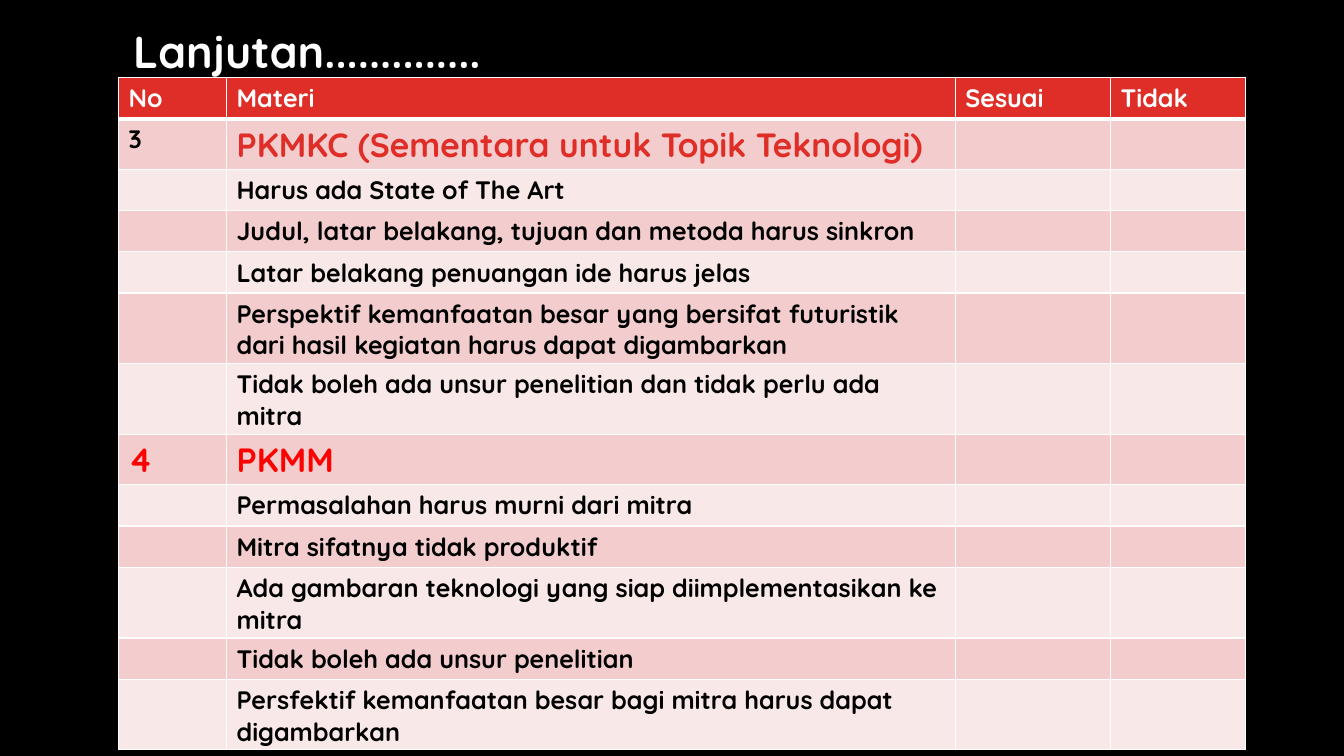
from collections import namedtuple
from dataclasses import dataclass

from lxml import etree
from pptx import Presentation
from pptx.dml.color import RGBColor
from pptx.enum.text import MSO_ANCHOR, MSO_AUTO_SIZE, PP_ALIGN
from pptx.oxml.ns import qn
from pptx.util import Cm, Pt

TOP = MSO_ANCHOR.TOP
LEFT = PP_ALIGN.LEFT
GROW = MSO_AUTO_SIZE.SHAPE_TO_FIT_TEXT
TITLE_ONLY = 5

Box = namedtuple("Box", "left top width height")


@dataclass(frozen=True)
class Theme:
    font: str = "Quicksand"
    background: str = "000000"
    white: str = "FFFFFF"
    ink: str = "000000"
    header: str = "DF2E28"
    alert: str = "FF0000"
    bands: tuple = ("F3CDCD", "F9E8E8")
    title_size: int = 32
    section_size: int = 24
    body_size: int = 18
    rule: int = 1
    header_rule: int = 3


THEME = Theme()

HEADINGS = ("No", "Materi", "Sesuai", "Tidak")
COLUMN_SHARES = (1.07, 7.23, 1.54, 1.34)

Section = namedtuple("Section", "number number_style name name_style criteria")
BODY = {"size": THEME.body_size, "color": THEME.ink}
SECTIONS = (
    Section(
        "3", BODY,
        "PKMKC (Sementara untuk Topik Teknologi)",
        {"size": THEME.section_size, "color": THEME.header},
        (
            "Harus ada State of The Art",
            "Judul, latar belakang, tujuan dan metoda harus sinkron",
            "Latar belakang penuangan ide harus jelas",
            "Perspektif kemanfaatan besar yang bersifat futuristik dari hasil "
            "kegiatan harus dapat digambarkan",
            "Tidak boleh ada unsur penelitian dan tidak perlu ada mitra",
        ),
    ),
    Section(
        "4", {"size": THEME.section_size, "color": THEME.alert},
        "PKMM",
        {"size": THEME.section_size, "color": THEME.alert},
        (
            "Permasalahan harus murni dari mitra",
            "Mitra sifatnya tidak produktif",
            "Ada gambaran teknologi yang siap diimplementasikan ke mitra",
            "Tidak boleh ada unsur penelitian",
            "Persfektif kemanfaatan besar bagi mitra harus dapat digambarkan",
        ),
    ),
)


def write(frame, text, *, size, color, bold=True, align=LEFT):
    paragraph = frame.paragraphs[0]
    paragraph.alignment = align
    run = paragraph.add_run()
    run.text = text
    run.font.name = THEME.font
    run.font.size = Pt(size)
    run.font.bold = bold
    run.font.color.rgb = RGBColor.from_string(color)


def set_borders(cell, top, bottom):
    """Draw white rules round a cell, with top and bottom widths in points."""
    properties = cell._tc.get_or_add_tcPr()
    widths = {"lnL": THEME.rule, "lnR": THEME.rule, "lnT": top, "lnB": bottom}
    for edge, width in widths.items():
        line = etree.SubElement(properties, qn("a:" + edge), w=str(Pt(width)))
        fill = etree.SubElement(line, qn("a:solidFill"))
        etree.SubElement(fill, qn("a:srgbClr"), val=THEME.white)


def place_title(slide, box):
    title = slide.shapes.title
    title.left, title.top, title.width, title.height = box
    frame = title.text_frame
    frame.word_wrap = False
    frame.auto_size = GROW
    frame.vertical_anchor = TOP
    write(frame, "Lanjutan..............", size=THEME.title_size, color=THEME.white)
    frame.paragraphs[0].line_spacing = 1.0


def checklist_rows():
    """Return the table's rows, each a list of (text, style) pairs."""
    heading_style = {"size": THEME.body_size, "color": THEME.white}
    rows = [[(heading, heading_style) for heading in HEADINGS]]
    for section in SECTIONS:
        rows.append([(section.number, section.number_style),
                     (section.name, section.name_style)])
        rows += [[("", BODY), (criterion, BODY)] for criterion in section.criteria]
    return rows


def place_checklist(slide, box):
    rows = checklist_rows()
    table = slide.shapes.add_table(len(rows), len(HEADINGS), *box).table
    for column, share in zip(table.columns, COLUMN_SHARES):
        column.width = int(box.width * share / sum(COLUMN_SHARES))
    for index, entries in enumerate(rows):
        background = THEME.bands[(index - 1) % 2] if index else THEME.header
        top = THEME.header_rule if index == 1 else THEME.rule
        bottom = THEME.rule if index else THEME.header_rule
        for cell in table.rows[index].cells:
            set_borders(cell, top, bottom)
            cell.fill.solid()
            cell.fill.fore_color.rgb = RGBColor.from_string(background)
        for cell, (text, style) in zip(table.rows[index].cells, entries):
            if text:
                write(cell.text_frame, text, **style)


def build_checklist_slide(presentation):
    slide = presentation.slides.add_slide(presentation.slide_layouts[TITLE_ONLY])
    slide.background.fill.solid()
    slide.background.fill.fore_color.rgb = RGBColor.from_string(THEME.background)
    place_title(slide, Box(Cm(3.1), Cm(0.46), Cm(9.7), Cm(1.63)))
    place_checklist(slide, Box(Cm(2.99), Cm(1.95), Cm(28.4), Cm(13.54)))


def main():
    presentation = Presentation()
    presentation.slide_width = Cm(33.87)
    presentation.slide_height = Cm(19.05)
    build_checklist_slide(presentation)
    presentation.save("out.pptx")


if __name__ == "__main__":
    main()
